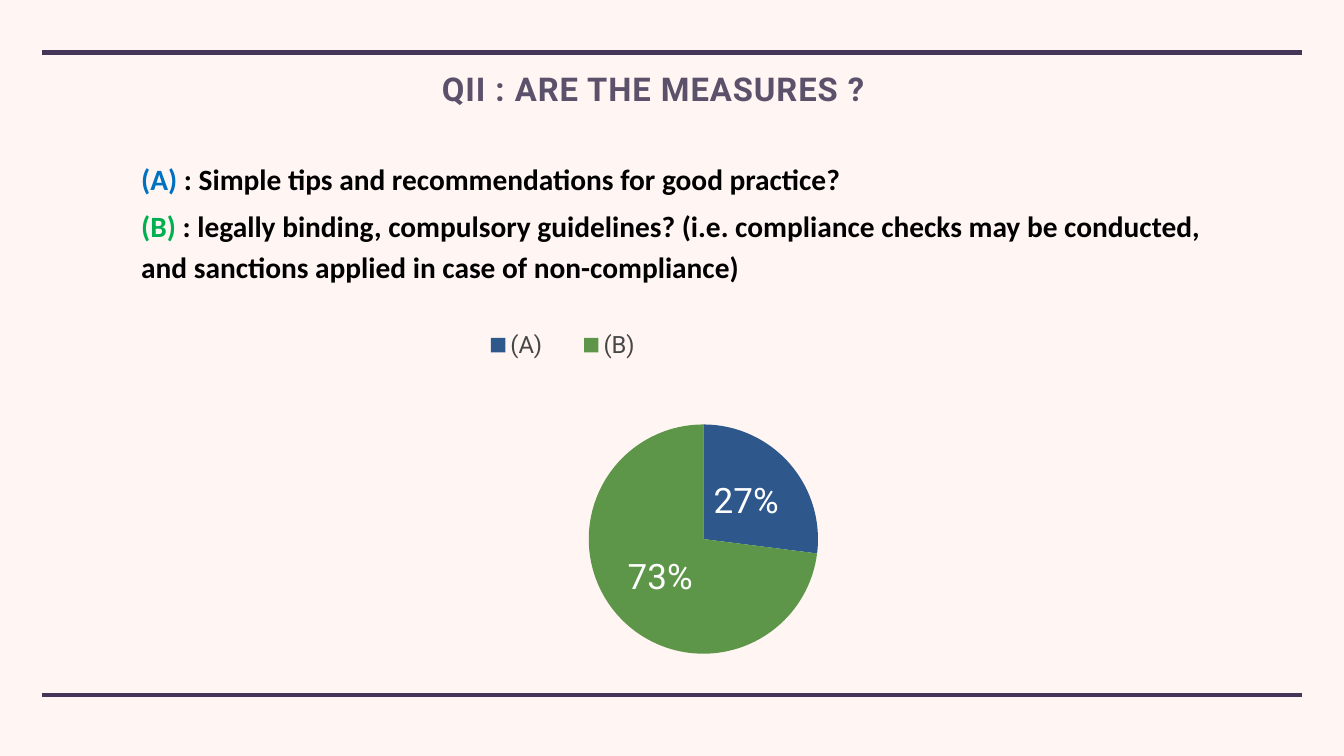
from lxml.etree import SubElement
from pptx import Presentation
from pptx.chart.data import CategoryChartData
from pptx.dml.color import RGBColor
from pptx.enum.chart import XL_CHART_TYPE, XL_LABEL_POSITION, XL_LEGEND_POSITION
from pptx.enum.shapes import MSO_CONNECTOR
from pptx.enum.text import MSO_ANCHOR, MSO_AUTO_SIZE, PP_ALIGN
from pptx.oxml.ns import qn
from pptx.util import Inches, Pt

BLUSH = RGBColor(0xFF, 0xF5, 0xF2)
PLUM = RGBColor(0x44, 0x36, 0x58)
MAUVE = RGBColor(0x5B, 0x51, 0x6A)
BLACK = RGBColor(0, 0, 0)
WHITE = RGBColor(0xFF, 0xFF, 0xFF)
GREY = RGBColor(0x46, 0x46, 0x46)
TEAL = RGBColor(0x1A, 0x5C, 0x71)
ANSWER_A = RGBColor(0x00, 0x70, 0xC0)
ANSWER_B = RGBColor(0x00, 0xB0, 0x50)
SLICE_A = RGBColor(0x2E, 0x57, 0x8C)
SLICE_B = RGBColor(0x5D, 0x96, 0x48)

COLUMNS, ROWS = 32, 18


def set_font(font, size, color, name="Roboto", bold=False):
    font.size, font.name, font.bold = Pt(size), name, bold
    font.color.rgb = color


def add_text(paragraph, text, spacing=None, **style):
    run = paragraph.add_run()
    run.text = text
    set_font(run.font, **style)
    if spacing:
        run.font._element.set("spc", str(round(spacing * 100)))


def set_layout(part, left, top, width, height, inner=False):
    """Place a chart part by shares of the chart's size."""
    old = part.find(qn("c:layout"))
    if old is not None:
        part.remove(old)
    layout = SubElement(part, qn("c:layout"))
    manual = SubElement(layout, qn("c:manualLayout"))
    settings = [("xMode", "edge"), ("yMode", "edge"),
                ("x", left), ("y", top), ("w", width), ("h", height)]
    if inner:
        settings.insert(0, ("layoutTarget", "inner"))
    for tag, value in settings:
        SubElement(manual, qn(f"c:{tag}")).set("val", str(value))
    return layout


class SurveySlide:
    """Holds the slide and places elements on a grid of columns and rows."""

    def __init__(self, deck):
        self.column = deck.slide_width / COLUMNS
        self.row = deck.slide_height / ROWS
        self.slide = deck.slides.add_slide(deck.slide_layouts[1])
        self.slide.background.fill.solid()
        self.slide.background.fill.fore_color.rgb = BLUSH

    def box(self, left, top, width, height):
        return (round(left * self.column), round(top * self.row),
                round(width * self.column), round(height * self.row))

    def rule(self, row):
        left, top, width, _ = self.box(1, row, COLUMNS - 2, 0)
        line = self.slide.shapes.add_connector(
            MSO_CONNECTOR.STRAIGHT, left, top, left + width, top)
        line.line.color.rgb = PLUM
        line.line.width = Pt(6)
        SubElement(line._element.spPr, qn("a:effectLst"))

    def place(self, holder, area, anchor):
        holder.left, holder.top, holder.width, holder.height = self.box(*area)
        frame = holder.text_frame
        frame.word_wrap = True
        frame.auto_size = MSO_AUTO_SIZE.NONE
        frame.vertical_anchor = anchor
        frame.margin_left = frame.margin_right = Inches(0.06)
        frame.margin_top = frame.margin_bottom = Inches(0.06)
        return frame

    def title(self, text, area):
        frame = self.place(self.slide.shapes.title, area, MSO_ANCHOR.TOP)
        frame.margin_right = Inches(0.8)
        heading = frame.paragraphs[0]
        heading.alignment = PP_ALIGN.CENTER
        heading.line_spacing = 0.9
        add_text(heading, text, size=46.8, color=MAUVE, bold=True, spacing=1.4)

    def answers(self, entries, area):
        frame = self.place(self.slide.placeholders[1], area, MSO_ANCHOR.MIDDLE)
        for index, (letter, color, wording) in enumerate(entries):
            answer = frame.add_paragraph() if index else frame.paragraphs[0]
            answer.alignment = PP_ALIGN.LEFT
            answer.line_spacing = 1.15
            answer.space_before = Pt(10)
            properties = answer._p.get_or_add_pPr()
            properties.set("marL", "0")
            properties.set("indent", "0")
            SubElement(properties, qn("a:buNone"))
            for text, shade in ((f"{letter} ", color), (f": {wording}", BLACK)):
                add_text(answer, text, size=42, color=shade, name="Calibri", bold=True)

    def pie(self, shares, colors, area):
        data = CategoryChartData()
        data.categories = list(shares)
        data.add_series("Series 1", list(shares.values()))
        chart = self.slide.shapes.add_chart(
            XL_CHART_TYPE.PIE, *self.box(*area), data).chart
        set_font(chart.font, 10, TEAL)
        chart.has_title = False

        chart.has_legend = True
        legend = chart.legend
        legend.position = XL_LEGEND_POSITION.TOP
        legend.include_in_layout = True
        set_font(legend.font, 34, GREY)
        legend_layout = set_layout(legend._element, 0.14, 0.01, 0.5, 0.11)
        legend._element.find(qn("c:legendPos")).addnext(legend_layout)

        plot = chart.plots[0]
        plot.vary_by_categories = True
        plot_area = plot._element.getparent()
        plot_area.insert(0, set_layout(plot_area, 0.449, 0.302, 0.546, 0.685, inner=True))

        series = plot.series[0]
        for index, color in enumerate(colors):
            fill = series.points[index].format.fill
            fill.solid()
            fill.fore_color.rgb = color
        labels = series.data_labels
        labels.show_percentage = True
        labels.show_value = False
        labels.number_format = "#,##0%"
        labels.number_format_is_linked = False
        labels.position = XL_LABEL_POSITION.CENTER
        set_font(labels.font, 50, WHITE)


def main():
    deck = Presentation()
    deck.slide_width, deck.slide_height = Inches(26.67), Inches(15)
    survey = SurveySlide(deck)
    for row in (1.25, 16.54):
        survey.rule(row)
    survey.title("QII : ARE THE MEASURES ?", (2.74, 1.68, 26.52, 2.17))
    survey.pie({"(A)": 27, "(B)": 73}, (SLICE_A, SLICE_B), (9.47, 7.7, 10.08, 7.97))
    survey.answers([
        ("(A)", ANSWER_A, "Simple tips and recommendations for good practice?"),
        ("(B)", ANSWER_B, "legally binding, compulsory guidelines? (i.e. compliance checks "
                          "may be conducted, and sanctions applied in case of non-compliance)"),
    ], (3.29, 3.65, 25.43, 3.17))
    deck.save("out.pptx")


if __name__ == "__main__":
    main()
